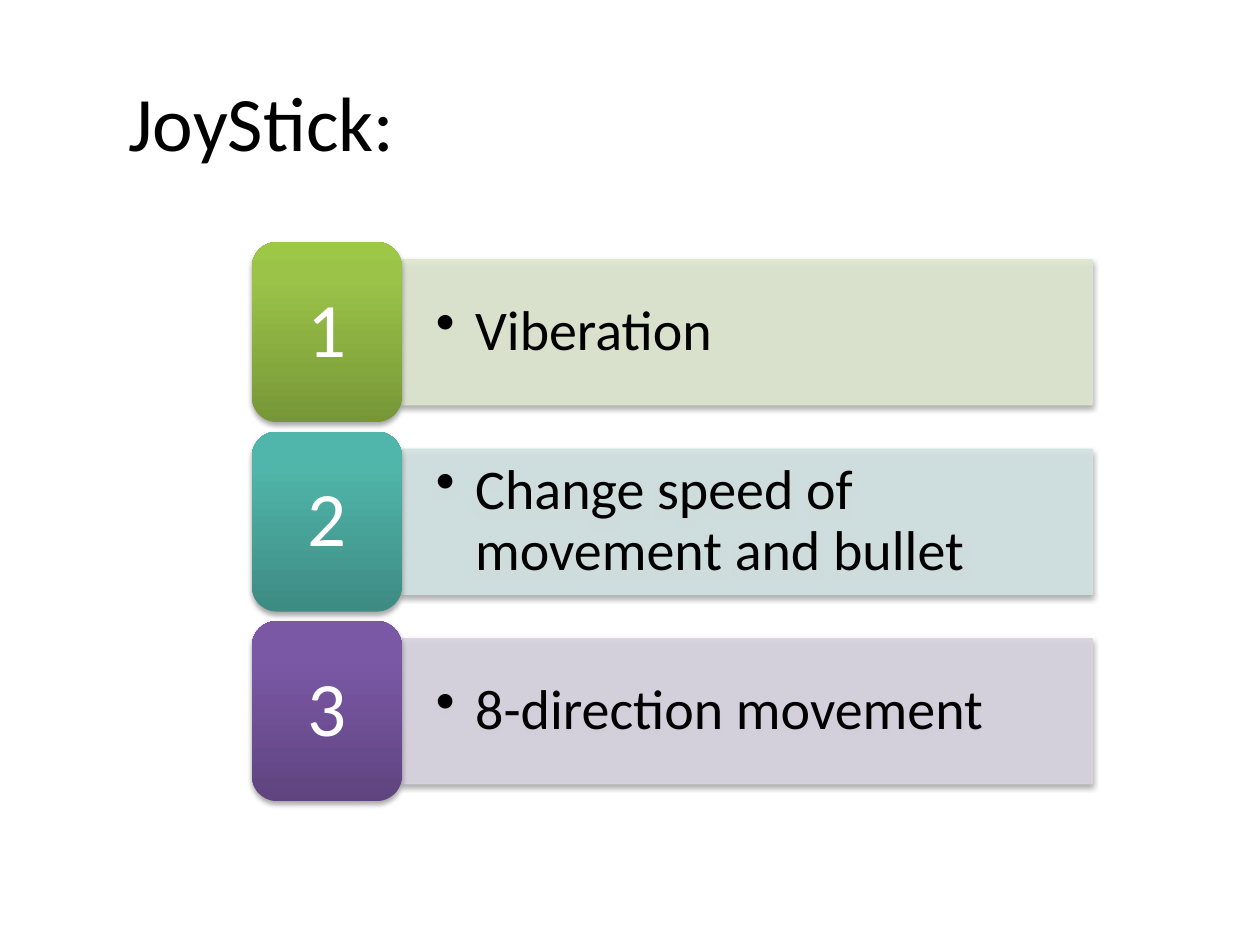
from pptx import Presentation
from pptx.dml.color import RGBColor
from pptx.enum.shapes import MSO_SHAPE as Kind
from pptx.enum.text import MSO_ANCHOR as Anchor, PP_ALIGN as Align
from pptx.oxml import parse_xml
from pptx.oxml.ns import nsdecls, qn
from pptx.util import Cm, Pt

FONT = "Calibri"
NS = nsdecls("a")
TOP, PITCH = 4.88, 3.82
ROWS = [
    # label, bar colour, gradient from bottom to top
    ("Viberation", "DEE7D1", ("779737", "9BC348", "9DC746")),
    ("Change speed of movement and bullet", "D2E3E2",
     ("3D8B83", "50B5AA", "4EB8AC")),
    ("8-direction movement", "D8D3E0", ("5F4480", "7B58A6", "7C57A8")),
]


def paint(color, hue):
    color.rgb = RGBColor.from_string(hue)


def write(shape, text, size, hue, pad, align=Align.LEFT):
    frame = shape.text_frame
    frame.word_wrap = True
    frame.vertical_anchor = Anchor.MIDDLE
    frame.margin_left = frame.margin_right = Cm(pad)
    frame.margin_top = frame.margin_bottom = Cm(pad / 2)
    para = frame.paragraphs[0]
    para.alignment = align
    run = para.add_run()
    run.text = text
    run.font.size = Pt(size)
    run.font.name = FONT
    paint(run.font.color, hue)
    return para


def add_shade(shape):
    shape.shadow.inherit = False
    effects = shape._element.spPr.find(qn("a:effectLst"))
    effects.append(parse_xml(
        f'<a:outerShdw {NS} blurRad="{Pt(3.1)}" dist="{Pt(1.8)}" '
        'dir="5400000" rotWithShape="0"><a:srgbClr val="000000">'
        '<a:alpha val="35000"/></a:srgbClr></a:outerShdw>'))


def add_bar(slide, top, text, hue):
    bar = slide.shapes.add_shape(
        Kind.RECTANGLE, Cm(8.1), Cm(top), Cm(13.92), Cm(2.92))
    bar.fill.solid()
    paint(bar.fill.fore_color, hue)
    paint(bar.line.color, hue)
    bar.line.width = Pt(0.75)
    # Fill and outline are slightly see-through
    for color in bar._element.spPr.iter(qn("a:srgbClr")):
        color.append(parse_xml(f'<a:alpha {NS} val="90000"/>'))
    add_shade(bar)
    para = write(bar, text, 32, "000000", 0.69)
    props = para._p.get_or_add_pPr()
    props.set("marL", str(Cm(0.79)))
    props.set("indent", str(Cm(-0.79)))
    props.append(parse_xml(f'<a:buChar {NS} char="•"/>'))
    para.line_spacing = 0.9


def add_badge(slide, top, text, hues):
    badge = slide.shapes.add_shape(
        Kind.ROUNDED_RECTANGLE, Cm(5.08), Cm(top), Cm(3.02), Cm(3.63))
    badge.fill.gradient()
    badge.fill.gradient_angle = 90
    stops = badge._element.spPr.find(".//" + qn("a:gsLst"))
    for stop in list(stops):
        stops.remove(stop)
    for place, hue in zip((0, 80, 100), hues):
        stops.append(parse_xml(
            f'<a:gs {NS} pos="{place * 1000}"><a:srgbClr val="{hue}"/></a:gs>'))
    badge.line.fill.background()
    add_shade(badge)
    para = write(badge, text, 44, "FFFFFF", 0.46, Align.CENTER)
    para.line_spacing = 0.9


def add_title(slide, text):
    box = slide.shapes.add_textbox(Cm(2.34), Cm(0.84), Cm(22.43), Cm(3.18))
    write(box, text, 44, "000000", 0.25)


def main():
    deck = Presentation()
    deck.slide_width, deck.slide_height = Cm(25.4), Cm(19.05)
    slide = deck.slides.add_slide(deck.slide_layouts[6])

    add_title(slide, "JoyStick:")

    # Numbered rows, each badge over the left end of its bar
    for i, (text, hue, hues) in enumerate(ROWS):
        top = TOP + i * PITCH
        add_bar(slide, top + 0.36, text, hue)
        add_badge(slide, top, str(i + 1), hues)

    deck.save("out.pptx")


if __name__ == "__main__":
    main()
